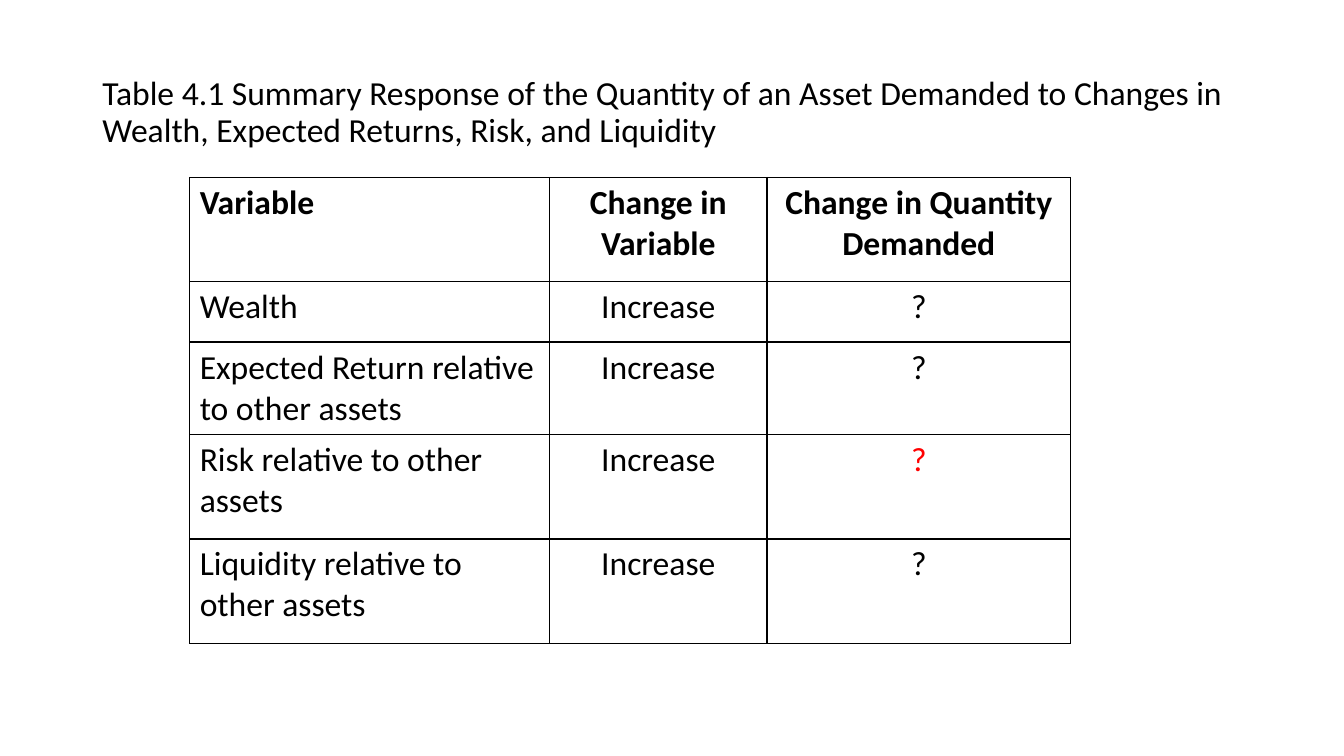
from lxml.etree import SubElement
from pptx import Presentation
from pptx.dml.color import RGBColor
from pptx.enum.text import MSO_ANCHOR as Anchor, PP_ALIGN as Align
from pptx.oxml.ns import qn
from pptx.util import Cm, Pt

BLACK, RED, WHITE = "000000", "FF0000", "FFFFFF"


def color(hex_code):
    return RGBColor.from_string(hex_code)


def write(frame, text, ink=BLACK, bold=False, align=Align.LEFT, spacing=1.0):
    frame.word_wrap = True
    para = frame.paragraphs[0]
    para.alignment = align
    para.line_spacing = spacing
    span = para.add_run()
    span.text = text
    span.font.name = "Calibri"
    span.font.size = Pt(24)
    span.font.bold = bold
    span.font.color.rgb = color(ink)


deck = Presentation()
deck.slide_width, deck.slide_height = Cm(33.87), Cm(19.05)
page = deck.slides.add_slide(deck.slide_layouts[6])
page.background.fill.solid()
page.background.fill.fore_color.rgb = color(WHITE)

title = page.shapes.add_textbox(Cm(2.33), Cm(1.01), Cm(29.21), Cm(3.68))
title.text_frame.vertical_anchor = Anchor.MIDDLE
write(
    title.text_frame,
    "Table 4.1 Summary Response of the Quantity of an Asset Demanded to Changes in "
    "Wealth, Expected Returns, Risk, and Liquidity",
    spacing=0.9,
)

header = ["Variable", "Change in Variable", "Change in Quantity Demanded"]
variables = [
    "Wealth",
    "Expected Return relative to other assets",
    "Risk relative to other assets",
    "Liquidity relative to other assets",
]
rows = [header] + [[variable, "Increase", "?"] for variable in variables]
widths = [9.07, 5.48, 7.65]
heights = [2.63, 1.52, 2.33, 2.63, 2.63]

table = page.shapes.add_table(
    len(rows), len(header), Cm(4.78), Cm(4.47), Cm(sum(widths)), Cm(sum(heights))
).table
table.horz_banding = False
for column, width in zip(table.columns, widths):
    column.width = Cm(width)
for row, height in zip(table.rows, heights):
    row.height = Cm(height)

for r, texts in enumerate(rows):
    for c, text in enumerate(texts):
        cell = table.cell(r, c)
        properties = cell._tc.get_or_add_tcPr()
        for side in ("lnL", "lnR", "lnT", "lnB"):
            border = SubElement(properties, qn(f"a:{side}"), w=str(Pt(1)))
            fill = SubElement(border, qn("a:solidFill"))
            SubElement(fill, qn("a:srgbClr"), val=BLACK)
        cell.fill.background()
        risk_answer = text == "?" and texts[0].startswith("Risk")
        write(
            cell.text_frame,
            text,
            ink=RED if risk_answer else BLACK,
            bold=r == 0,
            align=Align.CENTER if c else Align.LEFT,
        )

deck.save("out.pptx")
